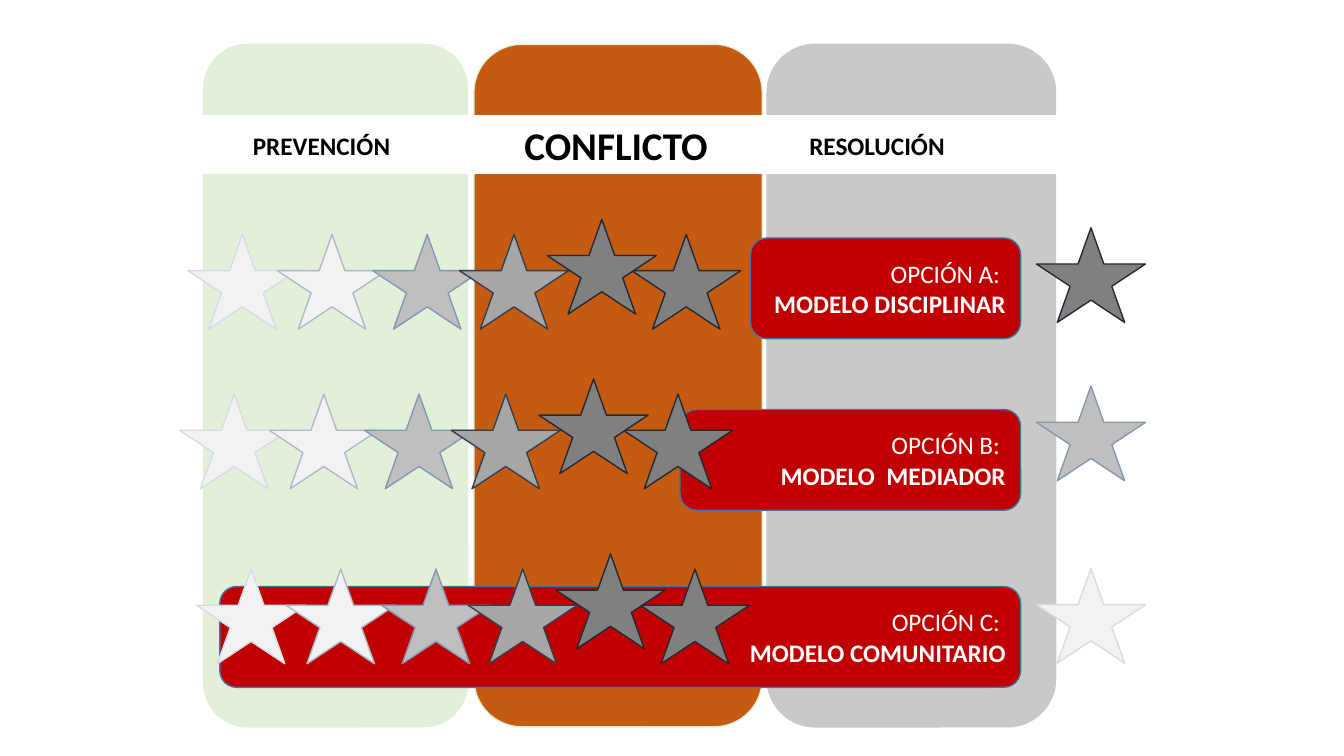
from pptx import Presentation
from pptx.util import Pt
from pptx.dml.color import RGBColor
from pptx.enum.shapes import MSO_SHAPE as Kind
from pptx.enum.text import PP_ALIGN as Align, MSO_ANCHOR as Anchor, MSO_AUTO_SIZE as Fit

HUES = {
    "white": "FFFFFF", "black": "000000", "green": "E2F0D9",
    "orange": "C55A11", "grey": "C9C9C9", "red": "C00000", "blue": "43739E",
}
# Star shades, from calm to conflict: fill and outline
SHADES = {
    "faint": ("F2F2F2", "D6DCE5"), "pale": ("F2F2F2", "ADB9CA"),
    "light": ("BFBFBF", "8497B0"), "mid": ("A6A6A6", "333F50"),
    "dark": ("808080", "222A35"),
}

deck = Presentation()
deck.slide_width, deck.slide_height = Pt(960), Pt(540)
slide = deck.slides.add_slide(deck.slide_layouts[6])


def draw(kind, box, fill, edge):
    shape = slide.shapes.add_shape(kind, *map(Pt, box))
    shape.shadow.inherit = False
    shape.fill.solid()
    shape.fill.fore_color.rgb = RGBColor.from_string(fill)
    shape.line.color.rgb = RGBColor.from_string(edge)
    shape.line.width = Pt(1)
    return shape


def write(para, text, size, hue, bold):
    run = para.add_run()
    run.text = text
    style = {"name": "Calibri", "size": Pt(size), "bold": bold}
    for key, value in style.items():
        setattr(run.font, key, value)
    run.font.color.rgb = RGBColor.from_string(HUES[hue])


# Phase columns and the white band across them
for left, width, fill, edge in [
    (548, 206, "grey", "grey"),
    (338.5, 206, "orange", "green"),
    (145.5, 188.5, "green", "green"),
]:
    draw(Kind.ROUNDED_RECTANGLE, (left, 31.7, width, 487.5), HUES[fill], HUES[edge])
draw(Kind.RECTANGLE, (128, 82.8, 711.5, 41), HUES["white"], HUES["white"])

# Phase names
for text, left, top, width, height, size in [
    ("RESOLUCIÓN", 571, 89.3, 112.3, 29, 18),
    ("PREVENCIÓN", 173.5, 89.3, 113.8, 29, 18),
    ("CONFLICTO", 367.5, 82.8, 147, 41, 28),
]:
    label = slide.shapes.add_textbox(*map(Pt, (left, top, width, height)))
    frame = label.text_frame
    frame.word_wrap = False
    frame.auto_size = Fit.SHAPE_TO_FIT_TEXT
    write(frame.paragraphs[0], text, size, "black", True)

# Option boxes, all ending at the same right edge
RIGHT = 729
for head, model, left, top in [
    ("OPCIÓN A: ", "MODELO DISCIPLINAR", 536, 170),
    ("OPCIÓN B: ", "MODELO  MEDIADOR", 485.7, 292.5),
    ("OPCIÓN C: ", "MODELO COMUNITARIO", 157, 419),
]:
    box = draw(Kind.ROUNDED_RECTANGLE, (left, top, RIGHT - left, 72),
               HUES["red"], HUES["blue"])
    frame = box.text_frame
    frame.word_wrap = True
    frame.vertical_anchor = Anchor.MIDDLE
    lines = [frame.paragraphs[0], frame.add_paragraph()]
    for para, text, bold in zip(lines, (head, model), (False, True)):
        para.alignment = Align.RIGHT
        write(para, text, 18, "white", bold)

# Star rows: shift from the first star, with the raised peak drawn last
STEPS = [
    (0, 0, "faint"), (64, 0, "pale"), (132, 0, "light"),
    (194, 0, "mid"), (317, 0, "dark"), (256.7, -10.8, "dark"),
]
for left, top, last, shade in [
    (134.2, 167.5, 162.7, "dark"),
    (128.3, 281.5, 275.8, "light"),
    (140.4, 406.5, 406.1, "faint"),
]:
    stars = [(left + dx, top + dy, tone) for dx, dy, tone in STEPS]
    for x, y, tone in stars + [(740.3, last, shade)]:
        draw(Kind.STAR_5_POINT, (x, y, 78, 67.7), *SHADES[tone])

deck.save("out.pptx")
